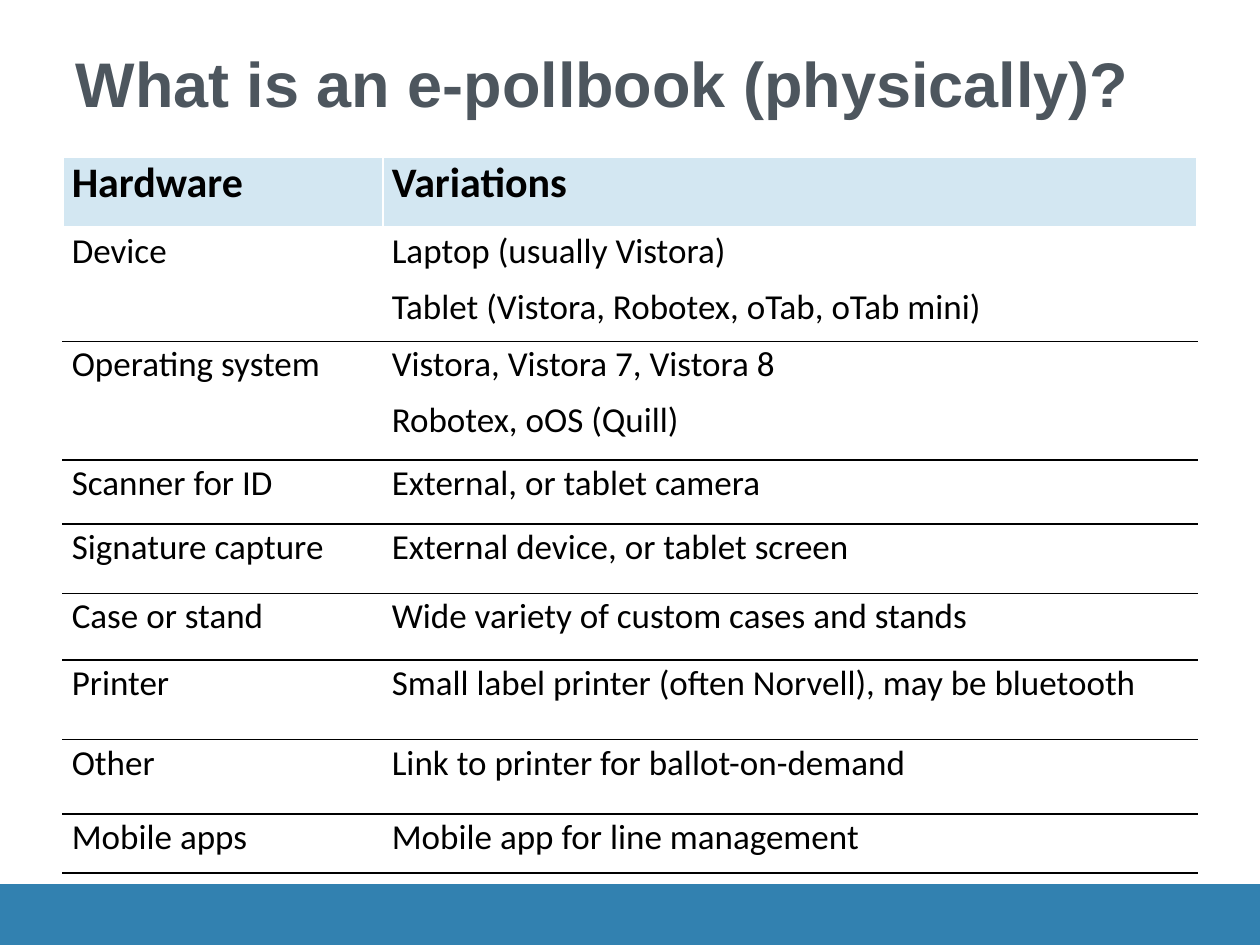
from lxml import etree
from pptx import Presentation, util as u
from pptx.dml.color import RGBColor
from pptx.enum import shapes, text
from pptx.oxml.ns import qn

BLUE = RGBColor(0x32, 0x81, 0xB0)
PALE_BLUE = RGBColor(0xD3, 0xE7, 0xF2)
SLATE = RGBColor(0x4D, 0x56, 0x5E)
BLACK = RGBColor(0, 0, 0)
WHITE = RGBColor(0xFF, 0xFF, 0xFF)

HARDWARE = [
    ("Hardware", ["Variations"], 0.56),
    ("Device", ["Laptop (usually Vistora)",
                "Tablet (Vistora, Robotex, oTab, oTab mini)"], 0.9),
    ("Operating system", ["Vistora, Vistora 7, Vistora 8",
                          "Robotex, oOS (Quill)"], 0.94),
    ("Scanner for ID", ["External, or tablet camera"], 0.51),
    ("Signature capture", ["External device, or tablet screen"], 0.55),
    ("Case or stand", ["Wide variety of custom cases and stands"], 0.53),
    ("Printer", ["Small label printer (often Norvell), may be bluetooth"], 0.63),
    ("Other", ["Link to printer for ballot-on-demand"], 0.59),
    ("Mobile apps", ["Mobile app for line management"], 0.47),
]


def set_all(target, values):
    for name, value in values.items():
        setattr(target, name, value)


class Deck:
    """Holds the style and the current slide; lengths are shares of the slide."""

    title_font = {"name": "Arial", "size": u.Pt(36), "bold": True}
    header_font = {"name": "Calibri", "size": u.Pt(24), "bold": True}
    body_font = {"name": "Calibri", "size": u.Pt(20), "bold": False}
    header_spacing = {"space_before": u.Pt(3), "space_after": u.Pt(3)}
    body_spacing = {**header_spacing, "line_spacing": 1.05}
    cell_margins = {"margin_left": u.Inches(0.07), "margin_right": u.Inches(0.07),
                    "margin_top": 0, "margin_bottom": 0}

    def __init__(self):
        self.prs = Presentation()
        self.prs.slide_width = u.Inches(10)
        self.prs.slide_height = u.Inches(7.5)
        self.slide = self.prs.slides.add_slide(self.prs.slide_layouts[5])

    def box(self, left, top, width, height):
        across, down = self.prs.slide_width, self.prs.slide_height
        return (round(left * across), round(top * down),
                round(width * across), round(height * down))

    def title(self, wording, *area):
        title = self.slide.shapes.title
        set_all(title, dict(zip(("left", "top", "width", "height"), self.box(*area))))
        set_all(title.text_frame, {"text": wording, "word_wrap": True,
                                   "auto_size": text.MSO_AUTO_SIZE.NONE,
                                   "vertical_anchor": text.MSO_ANCHOR.TOP})
        heading = title.text_frame.paragraphs[0]
        heading.alignment = text.PP_ALIGN.LEFT
        set_all(heading.runs[0].font, self.title_font)
        heading.runs[0].font.color.rgb = SLATE

    def band(self, *area):
        band = self.slide.shapes.add_shape(shapes.MSO_SHAPE.RECTANGLE, *self.box(*area))
        band.shadow.inherit = False
        band.fill.solid()
        band.fill.fore_color.rgb = BLUE
        band.line.color.rgb = BLUE
        band.line.width = u.Pt(0.75)

    def table(self, rows, column_shares, *area):
        frame = self.slide.shapes.add_table(len(rows), len(column_shares), *self.box(*area))
        table = frame.table
        for column, share in zip(table.columns, column_shares):
            column.width = round(share * self.prs.slide_width)
        for index, (part, variations, height) in enumerate(rows):
            table.rows[index].height = u.Inches(height)
            for cell, lines in zip(table.rows[index].cells, ([part], variations)):
                self.cell(cell, lines, index)

    def cell(self, cell, lines, row):
        header = row == 0
        above = (WHITE, 1) if header else (WHITE, 3) if row == 1 else (BLACK, 1)
        below = (WHITE, 3) if header else (BLACK, 1)
        self.borders(cell, L=(WHITE, 1), R=(WHITE, 1), T=above, B=below)
        cell.fill.solid()
        cell.fill.fore_color.rgb = PALE_BLUE if header else WHITE
        set_all(cell, self.cell_margins)
        cell.text_frame.text = "\n".join(lines)
        for paragraph in cell.text_frame.paragraphs:
            set_all(paragraph, self.header_spacing if header else self.body_spacing)
            font = paragraph.runs[0].font
            set_all(font, self.header_font if header else self.body_font)
            font.color.rgb = BLACK

    def borders(self, cell, **sides):
        properties = cell._tc.get_or_add_tcPr()
        for side, (color, points) in sides.items():
            line = etree.SubElement(properties, qn(f"a:ln{side}"), w=str(u.Pt(points)))
            fill = etree.SubElement(line, qn("a:solidFill"))
            etree.SubElement(fill, qn("a:srgbClr"), val=str(color))


def main():
    deck = Deck()
    deck.band(0, 0.936, 1, 0.067)
    deck.title("What is an e-pollbook (physically)?", 0.05, 0.04, 0.9, 0.12)
    deck.table(HARDWARE, (0.254, 0.646), 0.05, 1 / 6, 0.9, 0.76)
    deck.prs.save("out.pptx")


if __name__ == "__main__":
    main()
